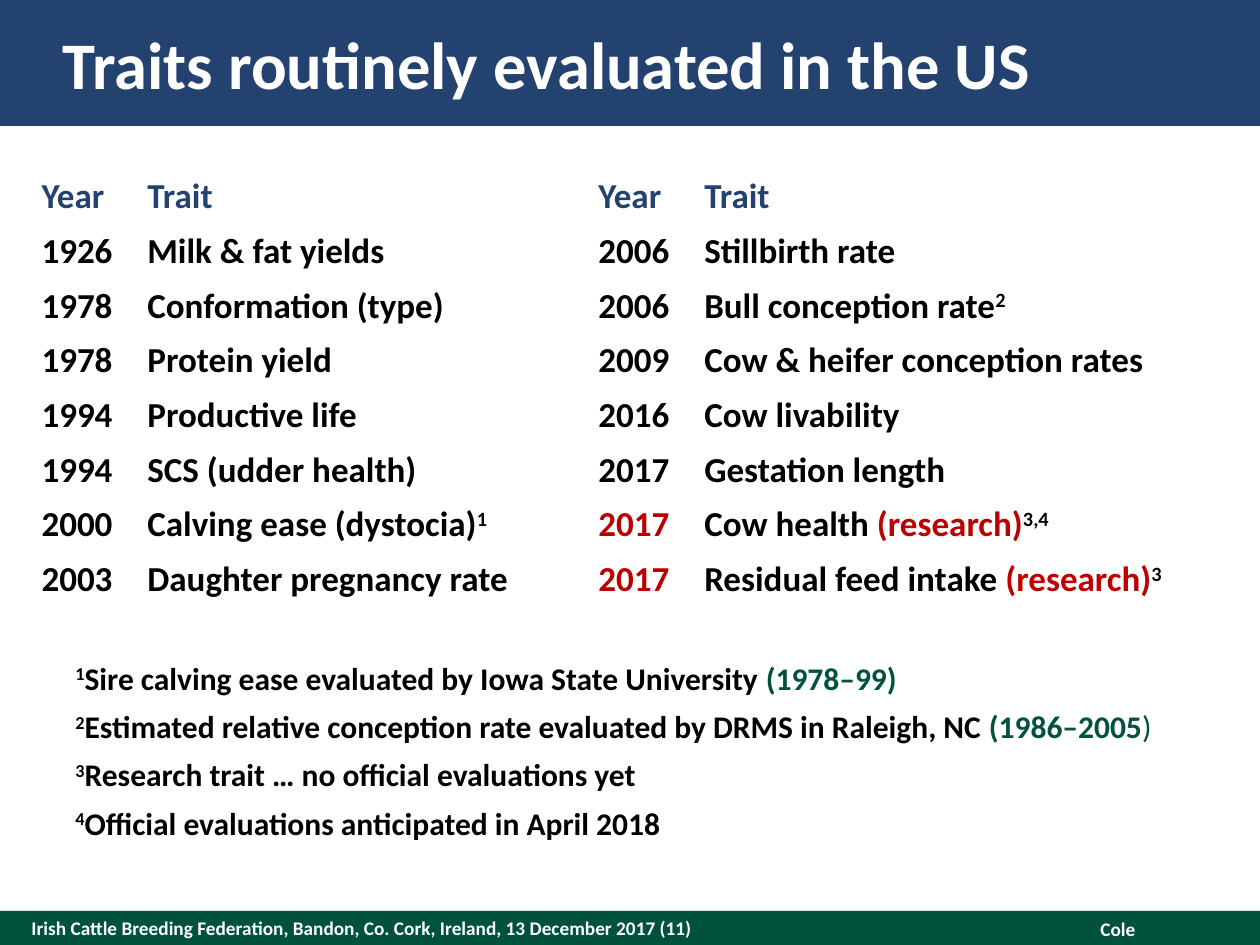
from typing import NamedTuple

from pptx import Presentation
from pptx.dml.color import RGBColor
from pptx.enum.shapes import MSO_SHAPE as Shape
from pptx.enum.text import MSO_ANCHOR as Anchor, PP_ALIGN as Align
from pptx.util import Inches, Pt

NAVY = RGBColor(0x24, 0x42, 0x70)
GREEN = RGBColor(0x00, 0x52, 0x3C)
RED = RGBColor(0xBA, 0x00, 0x00)
DARK_RED = RGBColor(0xC0, 0x00, 0x00)
BLACK = RGBColor(0x00, 0x00, 0x00)
WHITE = RGBColor(0xFF, 0xFF, 0xFF)


class Span(NamedTuple):
    """A stretch of text; no colour means the colour of its paragraph."""
    text: str
    color: RGBColor | None = None
    raised: bool = False
    bold: bool = True


class Box(NamedTuple):
    """Left, top, width and height in inches."""
    left: float
    top: float
    width: float
    height: float

    def lengths(self) -> list[Inches]:
        return [Inches(value) for value in self]


def note_mark(text: str) -> Span:
    return Span(text, raised=True)


# Content: each trait row is year, trait, year, trait
HEADER = [[Span("Year")], [Span("Trait")]] * 2
TRAITS = [
    [[Span("1926")], [Span("Milk & fat yields")],
     [Span("2006")], [Span("Stillbirth rate")]],
    [[Span("1978")], [Span("Conformation (type)")],
     [Span("2006")], [Span("Bull conception rate"), note_mark("2")]],
    [[Span("1978")], [Span("Protein yield")],
     [Span("2009")], [Span("Cow & heifer conception rates")]],
    [[Span("1994")], [Span("Productive life")],
     [Span("2016")], [Span("Cow livability")]],
    [[Span("1994")], [Span("SCS (udder health)")],
     [Span("2017")], [Span("Gestation length")]],
    [[Span("2000")], [Span("Calving ease (dystocia)"), note_mark("1")],
     [Span("2017", RED)],
     [Span("Cow health "), Span("(research)", RED), note_mark("3,4")]],
    [[Span("2003")], [Span("Daughter pregnancy rate")],
     [Span("2017", RED)],
     [Span("Residual feed intake "), Span("(research)", DARK_RED), note_mark("3")]],
]
FOOTNOTES = [
    [note_mark("1"), Span("Sire calving ease evaluated by Iowa State University "),
     Span("(1978–99)", GREEN)],
    [note_mark("2"),
     Span("Estimated relative conception rate evaluated by DRMS in Raleigh, NC "),
     Span("(1986–2005", GREEN), Span(")", GREEN, bold=False)],
    [note_mark("3"), Span("Research trait … no official evaluations yet")],
    [note_mark("4"), Span("Official evaluations anticipated in April 2018")],
]
COLUMN_WIDTHS = [0.84, 3.58, 0.84, 4.26]
ROW_HEIGHT = 0.43


def write(frame, lines: list[list[Span]], *, size: float, color: RGBColor,
          align: Align = Align.LEFT, line_spacing: Pt | None = None,
          space_after: float = 0) -> None:
    """Fill a text frame with one paragraph per line."""
    for index, spans in enumerate(lines):
        paragraph = frame.add_paragraph() if index else frame.paragraphs[0]
        paragraph.alignment = align
        paragraph.line_spacing = line_spacing
        paragraph.space_after = Pt(space_after)
        for span in spans:
            run = paragraph.add_run()
            run.text = span.text
            run.font.name = "Calibri"
            run.font.size = Pt(size)
            run.font.bold = span.bold
            run.font.color.rgb = span.color or color
            if span.raised:
                run.font._element.set("baseline", "30000")


def add_band(slide, box: Box, color: RGBColor) -> None:
    band = slide.shapes.add_shape(Shape.RECTANGLE, *box.lengths())
    band.shadow.inherit = False
    band.fill.solid()
    band.fill.fore_color.rgb = color
    band.line.fill.background()


def add_text(slide, box: Box, lines: list[list[Span]], *, inset: bool = True,
             anchor: Anchor = Anchor.TOP, **text_format) -> None:
    frame = slide.shapes.add_textbox(*box.lengths()).text_frame
    frame.word_wrap = True
    frame.vertical_anchor = anchor
    if not inset:
        frame.margin_left = frame.margin_right = 0
        frame.margin_top = frame.margin_bottom = 0
    write(frame, lines, **text_format)


def add_trait_table(slide, left: float, top: float) -> None:
    rows = [HEADER, *TRAITS]
    box = Box(left, top, sum(COLUMN_WIDTHS), ROW_HEIGHT * len(rows))
    table = slide.shapes.add_table(len(rows), len(COLUMN_WIDTHS), *box.lengths()).table
    for column, width in zip(table.columns, COLUMN_WIDTHS):
        column.width = Inches(width)
    for row_index, row in enumerate(rows):
        for column_index, spans in enumerate(row):
            cell = table.cell(row_index, column_index)
            cell.fill.solid()
            cell.fill.fore_color.rgb = WHITE
            write(cell.text_frame, [spans], size=20,
                  color=BLACK if row_index else NAVY, line_spacing=Pt(24))


def main() -> None:
    deck = Presentation()
    deck.slide_width, deck.slide_height = Inches(10), Inches(7.5)
    slide = deck.slides.add_slide(deck.slide_layouts[6])

    # Footer and title bands
    add_band(slide, Box(0, 7.23, 10, 0.27), GREEN)
    add_band(slide, Box(0, 0, 10, 1), NAVY)

    # Footer texts
    venue = "Irish Cattle Breeding Federation, Bandon, Co. Cork, Ireland, 13 December 2017 (11)"
    add_text(slide, Box(0.25, 7.23, 7, 0.27), [[Span(venue)]],
             inset=False, anchor=Anchor.MIDDLE, size=11, color=WHITE)
    add_text(slide, Box(7.11, 7.23, 2, 0.29), [[Span("Cole")]],
             size=11, color=WHITE, align=Align.RIGHT)

    # Title
    add_text(slide, Box(0.5, 0.2, 9, 0.6), [[Span("Traits routinely evaluated in the US")]],
             inset=False, anchor=Anchor.MIDDLE, size=38, color=WHITE)

    # Traits and their footnotes
    add_trait_table(slide, 0.23, 1.35)
    add_text(slide, Box(0.5, 5.18, 9, 1.57), FOOTNOTES,
             size=18, color=BLACK, space_after=6)

    deck.save("out.pptx")


if __name__ == "__main__":
    main()
